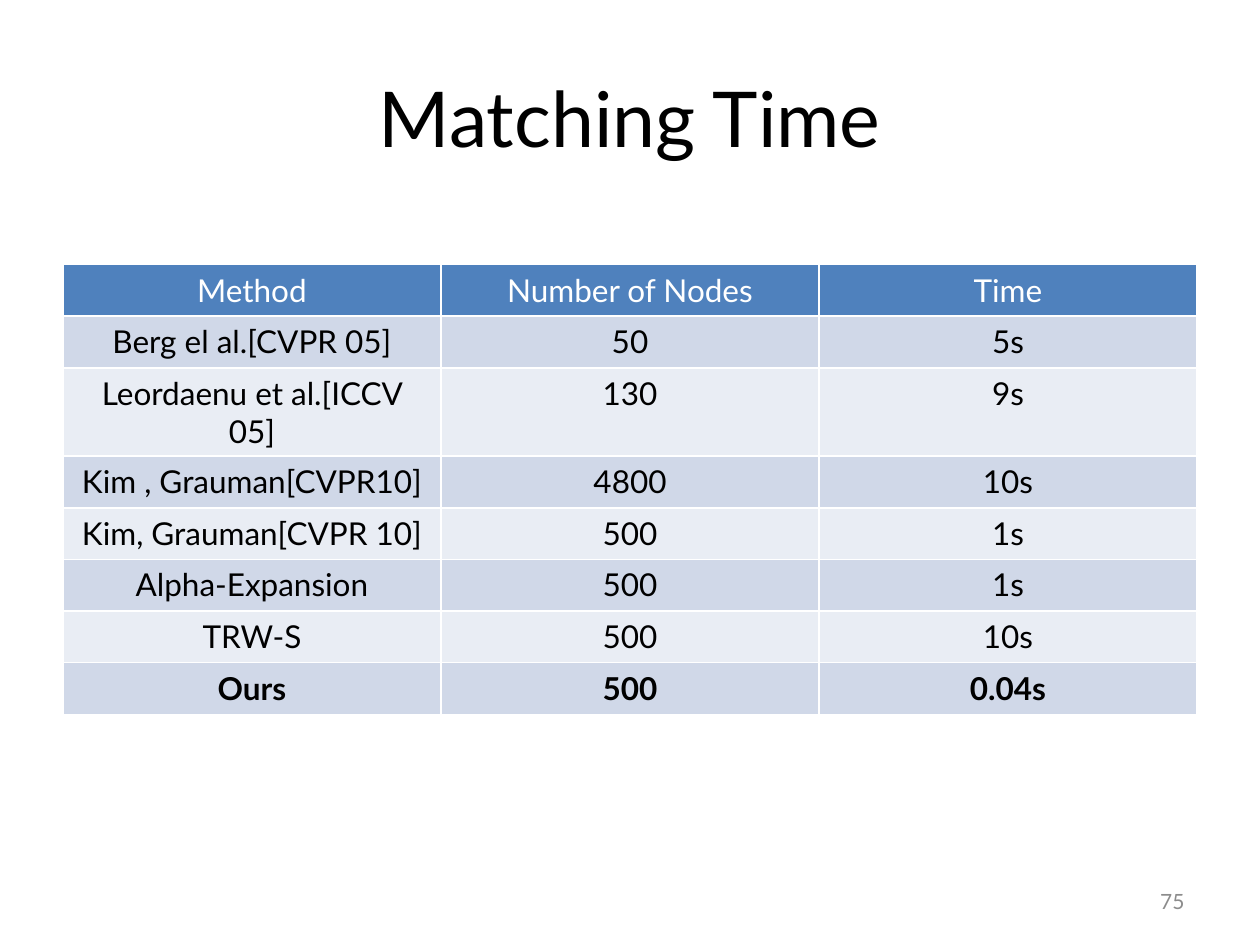
from dataclasses import dataclass

from lxml.etree import SubElement
from pptx import Presentation
from pptx.dml.color import RGBColor
from pptx.enum.text import MSO_ANCHOR, PP_ALIGN
from pptx.oxml.ns import qn
from pptx.util import Inches, Pt

FONT = "Lato"
WIDTH, HEIGHT = 10, 7.5
MARGIN = 0.05 * WIDTH
CONTENT_WIDTH = WIDTH - 2 * MARGIN
ROW_HEIGHT = 0.41
HEADER_FILL = "4F81BD"
BAND_FILLS = ("D0D8E8", "E9EDF4")
BORDER_SIDES = ("a:lnL", "a:lnR", "a:lnT", "a:lnB")

ROWS = [
    ("Method", "Number of Nodes", "Time"),
    ("Berg el al.[CVPR 05]", "50", "5s"),
    ("Leordaenu et al.[ICCV 05]", "130", "9s"),
    ("Kim , Grauman[CVPR10]", "4800", "10s"),
    ("Kim, Grauman[CVPR 10]", "500", "1s"),
    ("Alpha-Expansion", "500", "1s"),
    ("TRW-S", "500", "10s"),
    ("Ours", "500", "0.04s"),
]


@dataclass
class TextStyle:
    size: float
    color: str = "000000"
    align: PP_ALIGN = PP_ALIGN.CENTER
    bold: bool = False


@dataclass
class Label:
    text: str
    left: float
    top: float
    width: float
    height: float
    style: TextStyle


LABELS = [
    Label("Matching Time", MARGIN, 0.04 * HEIGHT, CONTENT_WIDTH, 1.25, TextStyle(44)),
    Label("75", 7.17, 6.95, 2.33, 0.4, TextStyle(12, "8C8C8C", PP_ALIGN.RIGHT)),
]


def rgb(value: str) -> RGBColor:
    return RGBColor.from_string(value)


def write(tf, text: str, style: TextStyle) -> None:
    tf.text = text
    p = tf.paragraphs[0]
    p.alignment = style.align
    font = p.runs[0].font
    font.name, font.size, font.bold = FONT, Pt(style.size), style.bold
    font.color.rgb = rgb(style.color)


def add_label(s, label: Label) -> None:
    box = (label.left, label.top, label.width, label.height)
    tf = s.shapes.add_textbox(*map(Inches, box)).text_frame
    tf.word_wrap = True
    tf.vertical_anchor = MSO_ANCHOR.MIDDLE
    write(tf, label.text, label.style)


def set_borders(cell, color: str, width: float) -> None:
    # Borders must come before the fill in the cell properties
    props = cell._tc.get_or_add_tcPr()
    for side in BORDER_SIDES:
        line = SubElement(props, qn(side), w=str(Pt(width)))
        fill = SubElement(line, qn("a:solidFill"))
        SubElement(fill, qn("a:srgbClr"), val=color)


def add_results_table(s, rows: list[tuple[str, ...]], top: float) -> None:
    table = s.shapes.add_table(
        len(rows), len(rows[0]), Inches(MARGIN), Inches(top),
        Inches(CONTENT_WIDTH), Inches(ROW_HEIGHT * len(rows)),
    ).table
    for i, row in enumerate(rows):
        table.rows[i].height = Inches(ROW_HEIGHT)
        header = i == 0
        fill = HEADER_FILL if header else BAND_FILLS[(i - 1) % 2]
        style = TextStyle(18, "FFFFFF" if header else "000000", bold=i == len(rows) - 1)
        for j, text in enumerate(row):
            cell = table.cell(i, j)
            write(cell.text_frame, text, style)
            set_borders(cell, "FFFFFF", 1)
            cell.fill.solid()
            cell.fill.fore_color.rgb = rgb(fill)


def main() -> None:
    prs = Presentation()
    prs.slide_width, prs.slide_height = Inches(WIDTH), Inches(HEIGHT)
    s = prs.slides.add_slide(prs.slide_layouts[6])
    # Title and page number
    for label in LABELS:
        add_label(s, label)
    # Timing comparison
    add_results_table(s, ROWS, top=0.28 * HEIGHT)
    prs.save("out.pptx")


if __name__ == "__main__":
    main()
